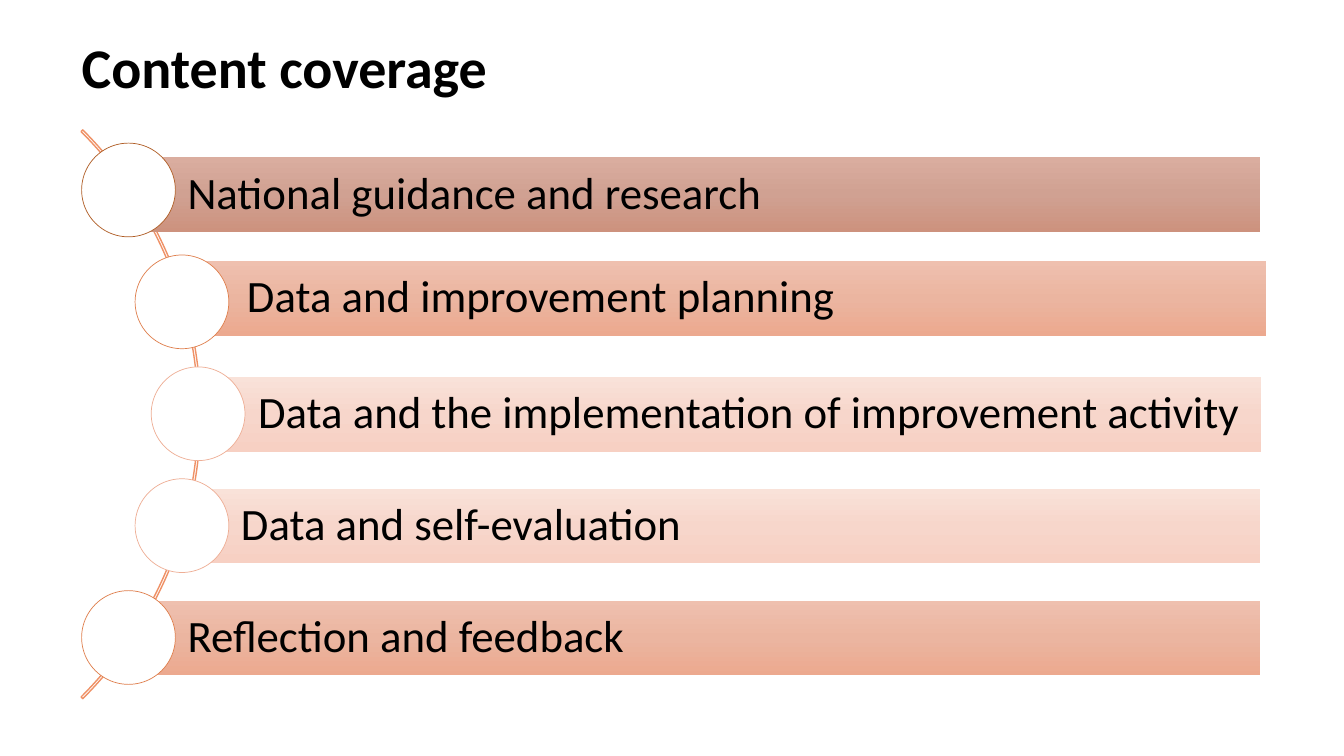
"""Build the content coverage slide."""
from copy import deepcopy

from pptx import Presentation
from pptx.dml.color import RGBColor
from pptx.enum import shapes, text
from pptx.oxml.ns import qn
from pptx.util import Inches, Pt

COLOURS = {"text": "000000", "circle": "FFFFFF", "arc": "EF9166"}
SHADES = {
    "dark": ("AF5C24", ("DAAD9F", "D0A192", "CD927E")),
    "middle": ("DF7F4D", ("EFC0AF", "EBB5A0", "ECA98F")),
    "light": ("EEAE95", ("F9E2D9", "F7D6CB", "F7D0C3")),
}
TOPICS = [
    ("National guidance and research", "dark", 0.81, 1.27, 1.56, 11.23),
    ("Data and improvement planning", "middle", 1.34, 1.86, 2.59, 10.7),
    ("Data and the implementation of improvement activity", "light", 1.5, 1.97, 3.74, 10.54),
    ("Data and self-evaluation", "light", 1.34, 1.8, 4.85, 10.7),
    ("Reflection and feedback", "middle", 0.81, 1.27, 5.96, 11.23),
]
BAR_HEIGHT = 0.74
CIRCLE_SIZE = 0.93
FIRST_CIRCLE_TOP = 1.42
CIRCLE_STEP = 1.11


class CoverageSlide:
    """Hold the style and the current slide."""

    def __init__(self, deck, font="Calibri"):
        """Add a title-only slide to the deck."""
        self.slide = deck.slides.add_slide(deck.slide_layouts[5])
        self.font = font

    def set_wording(self, frame, wording, size, bold=False):
        """Set one left-aligned paragraph in the middle of a frame."""
        frame.text = wording
        frame.word_wrap = True
        frame.vertical_anchor = text.MSO_ANCHOR.MIDDLE
        paragraph = frame.paragraphs[0]
        paragraph.alignment = text.PP_ALIGN.LEFT
        paragraph.line_spacing = 0.9
        paragraph.font.name = self.font
        paragraph.font.size = Pt(size)
        paragraph.font.bold = bold
        paragraph.font.color.rgb = RGBColor.from_string(COLOURS["text"])

    def title(self, wording, left, top, width, height):
        """Place and format the title placeholder."""
        heading = self.slide.shapes.title
        heading.left, heading.top = Inches(left), Inches(top)
        heading.width, heading.height = Inches(width), Inches(height)
        self.set_wording(heading.text_frame, wording, 40, bold=True)
        heading.text_frame.auto_size = text.MSO_AUTO_SIZE.NONE

    def shape(self, kind, left, top, width, height):
        """Add a preset shape without a shadow."""
        added = self.slide.shapes.add_shape(
            kind, Inches(left), Inches(top), Inches(width), Inches(height))
        added.shadow.inherit = False
        return added

    def outline(self, target, colour, weight):
        """Give a shape a solid outline."""
        target.line.color.rgb = RGBColor.from_string(colour)
        target.line.width = Pt(weight)

    def arc(self, left, top, size):
        """Add the thin arc that links the circles."""
        link = self.shape(shapes.MSO_SHAPE.BLOCK_ARC, left, top, size, size)
        for index, value in enumerate((189, 27, 0.003)):
            link.adjustments[index] = value
        link.fill.background()
        self.outline(link, COLOURS["arc"], 1)

    def bar(self, wording, gradient, left, top, width):
        """Add a topic bar with a three-stop vertical gradient."""
        topic = self.shape(shapes.MSO_SHAPE.RECTANGLE, left, top, width, BAR_HEIGHT)
        topic.line.fill.background()
        topic.fill.gradient()
        topic.fill.gradient_angle = 270
        stops = topic._element.spPr.find(qn("a:gradFill")).find(qn("a:gsLst"))
        stops.insert(1, deepcopy(stops[0]))
        for index, (stop, colour) in enumerate(zip(topic.fill.gradient_stops, gradient)):
            stop.position = index / 2
            stop.color.rgb = RGBColor.from_string(colour)
        frame = topic.text_frame
        frame.margin_left = Inches(0.59)
        frame.margin_right = frame.margin_top = frame.margin_bottom = Inches(0.09)
        self.set_wording(frame, wording, 32)

    def circle(self, colour, left, top):
        """Add a white circle with a thin outline."""
        marker = self.shape(shapes.MSO_SHAPE.OVAL, left, top, CIRCLE_SIZE, CIRCLE_SIZE)
        marker.fill.solid()
        marker.fill.fore_color.rgb = RGBColor.from_string(COLOURS["circle"])
        self.outline(marker, colour, 0.5)


def main():
    """Build and save the deck."""
    deck = Presentation()
    deck.slide_width, deck.slide_height = Inches(13.33), Inches(7.5)
    coverage = CoverageSlide(deck)
    coverage.title("Content coverage", 0.71, 0.43, 5.8, 0.54)
    coverage.arc(-5.99, 0.12, 7.98)
    for index, (wording, shade, circle_left, left, top, width) in enumerate(TOPICS):
        edge, gradient = SHADES[shade]
        coverage.bar(wording, gradient, left, top, width)
        coverage.circle(edge, circle_left, FIRST_CIRCLE_TOP + index * CIRCLE_STEP)
    deck.save("out.pptx")


if __name__ == "__main__":
    main()
